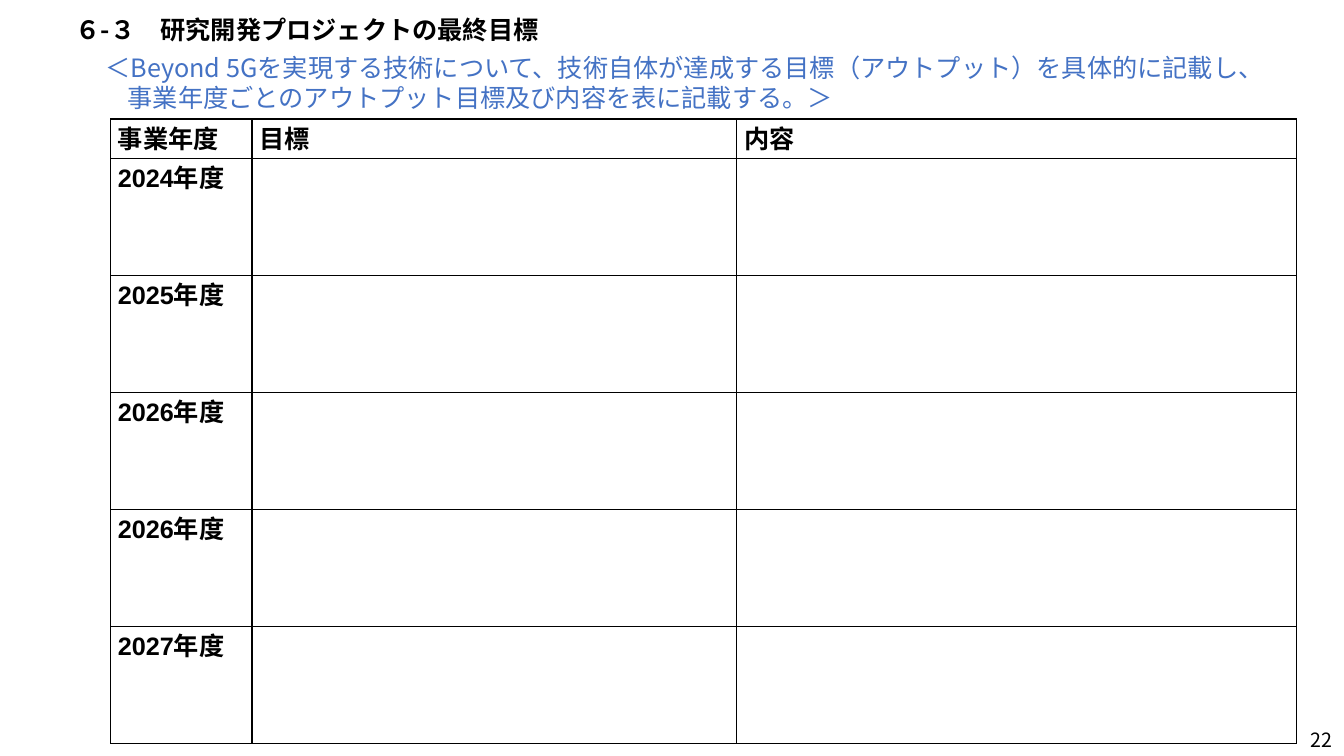
from dataclasses import dataclass

from lxml import etree
from pptx import Presentation
from pptx.dml.color import RGBColor
from pptx.enum import text
from pptx.oxml import ns
from pptx.util import Cm, Pt


@dataclass(frozen=True)
class Theme:
    black: RGBColor = RGBColor(0x00, 0x00, 0x00)
    blue: RGBColor = RGBColor(0x44, 0x72, 0xC4)
    japanese_font: str = "Noto Sans CJK JP"
    table_font: str = "Arial"
    body_size: Pt = Pt(18)
    number_size: Pt = Pt(14)
    border_width: Pt = Pt(1)


@dataclass(frozen=True)
class Box:
    left: float
    top: float
    width: float
    height: float

    def lengths(self) -> tuple:
        return Cm(self.left), Cm(self.top), Cm(self.width), Cm(self.height)


THEME = Theme()
TITLE_BOX = Box(1.65, 0.36, 29.21, 0.84)
GUIDANCE_BOX = Box(1.17, 1.19, 31.01, 1.8)
TABLE_BOX = Box(2.79, 3, 29.88, 15.74)
NUMBER_BOX = Box(31.67, 18.26, 2.16, 0.74)
COLUMN_WIDTHS = (3.56, 12.22, 14.1)
HEADER_HEIGHT, YEAR_HEIGHT = 0.99, 2.95
HEADINGS = ("事業年度", "目標", "内容")
YEARS = ("2024年度", "2025年度", "2026年度", "2026年度", "2027年度")


def style_paragraph(paragraph, align, color=THEME.black, size=THEME.body_size,
                    name=THEME.japanese_font, bold=False) -> None:
    font = paragraph.font
    font.name, font.size, font.bold = name, size, bold
    font.color.rgb = color
    paragraph.alignment = align
    defaults = paragraph._p.pPr.find(ns.qn("a:defRPr"))
    etree.SubElement(defaults, ns.qn("a:ea"), typeface=THEME.japanese_font)


def add_title(slide) -> None:
    title = slide.shapes.title
    title.left, title.top, title.width, title.height = TITLE_BOX.lengths()
    frame = title.text_frame
    frame.text = "６-３　研究開発プロジェクトの最終目標"
    frame.vertical_anchor = text.MSO_ANCHOR.MIDDLE
    frame.auto_size = text.MSO_AUTO_SIZE.NONE
    paragraph = frame.paragraphs[0]
    paragraph.line_spacing = 0.9
    style_paragraph(paragraph, text.PP_ALIGN.LEFT, bold=True)


def add_text(slide, box: Box, words: str):
    frame = slide.shapes.add_textbox(*box.lengths()).text_frame
    frame.word_wrap = True
    frame.text = words
    return frame


def add_guidance(slide) -> None:
    frame = add_text(
        slide, GUIDANCE_BOX,
        "＜Beyond 5Gを実現する技術について、技術自体が達成する目標（アウトプット）を具体的に記載し、"
        "事業年度ごとのアウトプット目標及び内容を表に記載する。＞")
    frame.auto_size = text.MSO_AUTO_SIZE.SHAPE_TO_FIT_TEXT
    paragraph = frame.paragraphs[0]
    paragraph.space_before = Pt(6)
    style_paragraph(paragraph, text.PP_ALIGN.LEFT, color=THEME.blue)
    properties = paragraph._p.get_or_add_pPr()
    properties.set("marL", str(Cm(1.8)))
    properties.set("indent", str(Cm(-0.56)))


def add_page_number(slide) -> None:
    frame = add_text(slide, NUMBER_BOX, "22")
    frame.vertical_anchor = text.MSO_ANCHOR.MIDDLE
    style_paragraph(frame.paragraphs[0], text.PP_ALIGN.RIGHT, size=THEME.number_size)


def add_borders(cell) -> None:
    properties = cell._tc.get_or_add_tcPr()
    for position, side in enumerate(("lnL", "lnR", "lnT", "lnB")):
        line = etree.Element(ns.qn(f"a:{side}"), w=str(THEME.border_width))
        fill = etree.SubElement(line, ns.qn("a:solidFill"))
        etree.SubElement(fill, ns.qn("a:srgbClr"), val=str(THEME.black))
        properties.insert(position, line)


def format_cell(cell, words: str) -> None:
    cell.text = words
    cell.margin_left = cell.margin_right = Cm(0.18)
    cell.margin_top = cell.margin_bottom = 0
    cell.fill.background()
    add_borders(cell)
    style_paragraph(cell.text_frame.paragraphs[0], text.PP_ALIGN.JUSTIFY,
                    name=THEME.table_font, bold=True)


def add_goal_table(slide) -> None:
    rows = [HEADINGS] + [(year, "", "") for year in YEARS]
    table = slide.shapes.add_table(len(rows), len(HEADINGS), *TABLE_BOX.lengths()).table
    table.first_row = table.horz_banding = False
    for column, width in zip(table.columns, COLUMN_WIDTHS):
        column.width = Cm(width)
    for index, (row, entries) in enumerate(zip(table.rows, rows)):
        row.height = Cm(YEAR_HEIGHT if index else HEADER_HEIGHT)
        for cell, words in zip(row.cells, entries):
            format_cell(cell, words)


def main() -> None:
    presentation = Presentation()
    presentation.slide_width, presentation.slide_height = Cm(33.87), Cm(19.05)
    slide = presentation.slides.add_slide(presentation.slide_layouts.get_by_name("Title Only"))
    add_page_number(slide)
    add_title(slide)
    add_guidance(slide)
    add_goal_table(slide)
    presentation.save("out.pptx")


if __name__ == "__main__":
    main()
